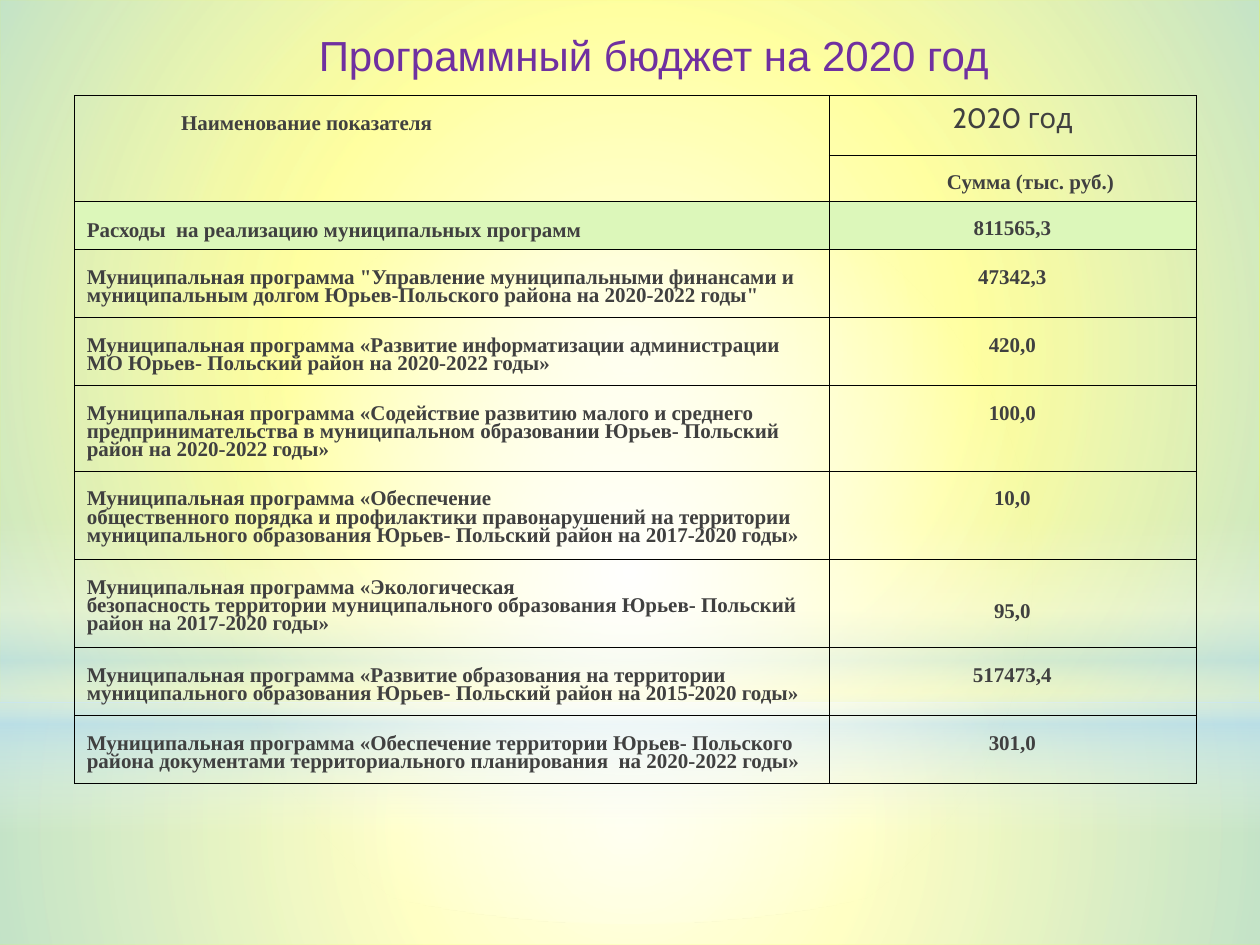
import pptx
import pptx.dml.color
import pptx.enum.shapes
import pptx.enum.text
import pptx.oxml
import pptx.oxml.ns
import pptx.util

Cm, Pt = pptx.util.Cm, pptx.util.Pt
SHAPE = pptx.enum.shapes.MSO_SHAPE
ALIGN = pptx.enum.text.PP_ALIGN
ANCHOR = pptx.enum.text.MSO_ANCHOR
NS = pptx.oxml.ns.nsdecls("a")

# Content
TITLE = "Программный бюджет на 2020 год"
HEAD_NAME, HEAD_YEAR, HEAD_SUM = "Наименование показателя", "2020 год", "Сумма (тыс. руб.)"
PROGRAMS = [  # name, amount, row height in cm
    ("Расходы  на реализацию муниципальных программ", "811565,3", 0.97),
    ('Муниципальная программа "Управление муниципальными финансами и муниципальным '
     'долгом Юрьев-Польского района на 2020-2022 годы"', "47342,3", 1.37),
    ("Муниципальная программа «Развитие информатизации администрации "
     "МО Юрьев- Польский район на 2020-2022 годы»", "420,0", 1.37),
    ("Муниципальная программа «Содействие развитию малого и среднего предпринимательства "
     "в муниципальном образовании Юрьев- Польский район на 2020-2022 годы»", "100,0", 1.73),
    ("Муниципальная программа «Обеспечение\nобщественного порядка и профилактики "
     "правонарушений на территории муниципального образования Юрьев- Польский район "
     "на 2017-2020 годы»", "10,0", 1.78),
    ("Муниципальная программа «Экологическая\nбезопасность территории муниципального "
     "образования Юрьев- Польский\nрайон на 2017-2020 годы»", "95,0", 1.78),
    ("Муниципальная программа «Развитие образования на территории муниципального "
     "образования Юрьев- Польский район на 2015-2020 годы»", "517473,4", 1.37),
    ("Муниципальная программа «Обеспечение территории Юрьев- Польского района документами "
     "территориального планирования  на 2020-2022 годы»", "301,0", 1.37),
]
HEAD_HEIGHTS = [1.2, 0.9]
COL_WIDTHS = [15.21, 7.4]

RADIAL = ('<a:path path="circle"><a:fillToRect l="50000" t="50000" r="50000" b="50000"/>'
          '</a:path>')
LINEAR = '<a:lin ang="5400000" scaled="0"/>'
WHITE, BLUE = "FFFFFF", "B4DCFA"
GLOWS = [  # shape, top, height, gradient kind, stops (position %, colour, opacity %)
    (SHAPE.RECTANGLE, 14.17, 4.88, RADIAL, [(0, WHITE, 91), (37, WHITE, 76), (100, BLUE, 79)]),
    (SHAPE.RECTANGLE, 0, 14.17, RADIAL, [(0, WHITE, 89), (48, WHITE, 62), (100, BLUE, 79)]),
    (SHAPE.RECTANGLE, 10.46, 6.35, LINEAR, [(0, WHITE, 0), (29, WHITE, 30), (45, BLUE, 40),
                                            (55, WHITE, 26), (65, BLUE, 60), (100, WHITE, 0)]),
    (SHAPE.OVAL, 4.45, 14.17, RADIAL, [(0, WHITE, 100), (56, WHITE, 0)]),
]


def rgb(color):
    return pptx.dml.color.RGBColor.from_string(color)


def add_text(tf, text, size=12, font="Times New Roman", color="404040", bold=True,
             align=ALIGN.LEFT, spacing=0.78, before=0):
    for i, line in enumerate(text.split("\n")):
        p = tf.paragraphs[0] if i == 0 else tf.add_paragraph()
        p.alignment, p.line_spacing, p.space_before = align, spacing, Pt(before)
        r = p.add_run()
        r.text = line
        r.font.size, r.font.name, r.font.bold = Pt(size), font, bold
        r.font.color.rgb = rgb(color)


def add_glow(s, kind, top, height, geometry, stops):
    sp = s.shapes.add_shape(kind, 0, Cm(top), Cm(25.4), Cm(height))
    sp.shadow.inherit = False
    sp.line.fill.background()
    sp.fill.background()
    gs = "".join(f'<a:gs pos="{pos * 1000}"><a:srgbClr val="{color}">'
                 f'<a:alpha val="{alpha * 1000}"/></a:srgbClr></a:gs>'
                 for pos, color, alpha in stops)
    no_fill = sp.element.spPr.find(pptx.oxml.ns.qn("a:noFill"))
    no_fill.getparent().replace(no_fill, pptx.oxml.parse_xml(
        f'<a:gradFill {NS} rotWithShape="1"><a:gsLst>{gs}</a:gsLst>{geometry}</a:gradFill>'))


def style_cell(cell, fill=None, left=0.25, top=0.41):
    cell.margin_left, cell.margin_top = Cm(left), Cm(top)
    if fill:
        cell.fill.solid()
        cell.fill.fore_color.rgb = rgb(fill)
    else:
        cell.fill.background()
    tc_pr = cell._tc.get_or_add_tcPr()
    for i, side in enumerate("LRTB"):
        tc_pr.insert(i, pptx.oxml.parse_xml(
            f'<a:ln{side} {NS} w="{Pt(0.06)}"><a:solidFill><a:srgbClr val="000000"/>'
            f'</a:solidFill></a:ln{side}>'))


prs = pptx.Presentation()
prs.slide_width, prs.slide_height = Cm(25.4), Cm(19.05)
s = prs.slides.add_slide(prs.slide_layouts[6])

# Background
s.background.fill.solid()
s.background.fill.fore_color.rgb = rgb("FFFF00")
for glow in GLOWS:
    add_glow(s, *glow)

# Title
tf = s.shapes.add_textbox(Cm(2), Cm(0.3), Cm(22.36), Cm(1.6)).text_frame
tf.word_wrap = True
tf.vertical_anchor = ANCHOR.MIDDLE
add_text(tf, TITLE, 24, "Arial", "7030A0", False, ALIGN.CENTER, 1.0)

# Table grid
heights = HEAD_HEIGHTS + [height for _, _, height in PROGRAMS]
table = s.shapes.add_table(len(heights), 2, Cm(1.5), Cm(1.92),
                           Cm(sum(COL_WIDTHS)), Cm(sum(heights))).table
table.first_row = table.horz_banding = False
for column, width in zip(table.columns, COL_WIDTHS):
    column.width = Cm(width)
for row, height in zip(table.rows, heights):
    row.height = Cm(height)

# Header rows
table.cell(0, 0).merge(table.cell(1, 0))
for row, col, left, top in [(0, 0, 2.15, 0.41), (1, 0, 0.25, 0.41),
                            (0, 1, 0.25, 0.13), (1, 1, 2.38, 0.41)]:
    style_cell(table.cell(row, col), left=left, top=top)
add_text(table.cell(0, 0).text_frame, HEAD_NAME)
add_text(table.cell(0, 1).text_frame, HEAD_YEAR, 16, "Cabin", bold=False,
         align=ALIGN.CENTER, spacing=1.01, before=7)
add_text(table.cell(1, 1).text_frame, HEAD_SUM)

# Program rows
for i, (name, amount, _) in enumerate(PROGRAMS):
    name_cell, sum_cell = table.rows[i + len(HEAD_HEIGHTS)].cells
    fill = "DCF7BA" if i == 0 else None
    style_cell(name_cell, fill)
    style_cell(sum_cell, fill, top=0.91 if amount == "95,0" else 0.41)
    add_text(name_cell.text_frame, name)
    add_text(sum_cell.text_frame, amount, align=ALIGN.CENTER)
    if i == 0:
        name_cell.vertical_anchor = ANCHOR.MIDDLE

prs.save("out.pptx")
